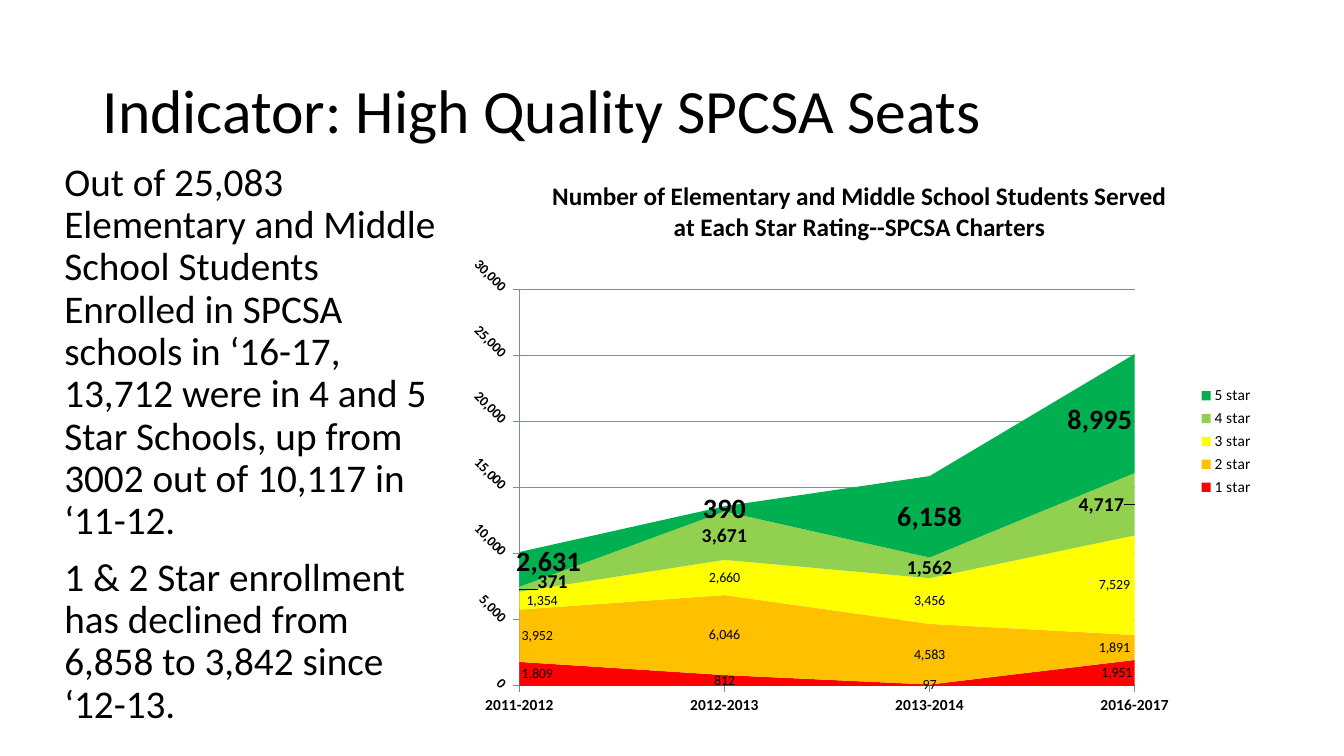
import pptx
import pptx.chart.data
import pptx.dml.color
import pptx.enum.chart
import pptx.enum.text
import pptx.oxml
import pptx.oxml.ns
import pptx.util

YEARS = ["2011-2012", "2012-2013", "2013-2014", "2016-2017"]
# name, students per year, colour, label size, bold,
# label shifts {year index: (x, y)} as shares of the chart
RATINGS = [
    ("1 star", (1809, 812, 97, 1951), "FF0000", 10, False, {0: (0.022, 0), 3: (-0.022, 0)}),
    ("2 star", (3952, 6046, 4583, 1891), "FFC000", 10, False, {0: (0.022, 0), 3: (-0.025, 0)}),
    ("3 star", (1354, 2660, 3456, 7529), "FFFF00", 10, False, {0: (0.028, 0), 3: (-0.025, 0)}),
    ("4 star", (371, 3671, 1562, 4717), "92D050", 14, True, {0: (0.041, -0.013), 3: (-0.041, 0)}),
    ("5 star", (2631, 390, 6158, 8995), "00B050", 20, True, {0: (0.036, -0.014), 3: (-0.043, 0.01)}),
]
FINDINGS = [
    "Out of 25,083 Elementary and Middle School Students Enrolled in SPCSA schools "
    "in ‘16-17, 13,712 were in 4 and 5 Star Schools, up from 3002 out of 10,117 in ‘11-12.",
    "1 & 2 Star enrollment has declined from 6,858 to 3,842 since ‘12-13.",
]


def colour(hex_code):
    return pptx.dml.color.RGBColor.from_string(hex_code)


def manual_layout(**settings):
    """Build a chart layout element from its settings, in schema order."""
    parts = "".join(f'<c:{key} val="{value}"/>' for key, value in settings.items())
    return pptx.oxml.parse_xml(
        f'<c:layout {pptx.oxml.ns.nsdecls("c")}><c:manualLayout>{parts}</c:manualLayout></c:layout>')


class SlideBuilder:
    font_name = "Calibri"
    ink = "000000"
    grid_line = "7F8BA8"
    axis_line = "7088C8"

    def __init__(self, deck):
        self.deck = deck
        self.slide = deck.slides.add_slide(deck.slide_layouts[6])

    def place(self, left, top, width, height):
        """Turn percentages of the slide into lengths."""
        across, down = self.deck.slide_width / 100, self.deck.slide_height / 100
        return [int(n) for n in (left * across, top * down, width * across, height * down)]

    def style(self, font, size, bold=False):
        font.name = self.font_name
        font.size = pptx.util.Pt(size)
        font.bold = bold
        font.color.rgb = colour(self.ink)

    def rule(self, line, hex_code):
        line.color.rgb = colour(hex_code)
        line.width = pptx.util.Pt(0.75)

    def text(self, area, paragraphs, size, anchor, space_before=0):
        frame = self.slide.shapes.add_textbox(*self.place(*area)).text_frame
        frame.word_wrap = True
        frame.vertical_anchor = anchor
        for index, wording in enumerate(paragraphs):
            paragraph = frame.add_paragraph() if index else frame.paragraphs[0]
            paragraph.line_spacing = 0.9
            paragraph.space_before = pptx.util.Pt(space_before)
            run = paragraph.add_run()
            run.text = wording
            self.style(run.font, size)

    def area_chart(self, area, heading, categories, ratings):
        data = pptx.chart.data.CategoryChartData(number_format="#,##0")
        data.categories = categories
        for name, students, *_ in ratings:
            data.add_series(name, students)
        chart = self.slide.shapes.add_chart(
            pptx.enum.chart.XL_CHART_TYPE.AREA_STACKED, *self.place(*area), data).chart
        self.style(chart.font, 10)
        chart.plots[0].vary_by_categories = False

        # Heading and legend
        chart.has_title = True
        run = chart.chart_title.text_frame.paragraphs[0].add_run()
        run.text = heading
        self.style(run.font, 18, True)
        chart.chart_title.include_in_layout = False
        chart.has_legend = True
        chart.legend.position = pptx.enum.chart.XL_LEGEND_POSITION.RIGHT
        chart.legend.include_in_layout = False
        self.style(chart.legend.font, 11)

        self.axes(chart)
        for series, (_, _, fill, size, bold, shifts) in zip(chart.plots[0].series, ratings):
            series.format.fill.solid()
            series.format.fill.fore_color.rgb = colour(fill)
            self.labels(series, size, bold, shifts)

        # Plot area inside the chart
        plot = chart._chartSpace.xpath("c:chart/c:plotArea")[0]
        for old in plot.xpath("c:layout"):
            plot.remove(old)
        plot.insert(0, manual_layout(layoutTarget="inner", xMode="edge", yMode="edge",
                                     x=0.08, y=0.232, w=0.76, h=0.698))

    def axes(self, chart):
        students, years = chart.value_axis, chart.category_axis
        for axis, size in ((students, 10), (years, 11)):
            axis.major_tick_mark = pptx.enum.chart.XL_TICK_MARK.OUTSIDE
            axis.minor_tick_mark = pptx.enum.chart.XL_TICK_MARK.NONE
            self.style(axis.tick_labels.font, size, True)
            self.rule(axis.format.line, self.axis_line)
        students.minimum_scale, students.maximum_scale = 0, 30000
        students.major_unit = 5000
        students.has_major_gridlines = True
        self.rule(students.major_gridlines.format.line, self.grid_line)
        students.tick_labels.number_format = "#,##0"
        students.tick_labels.number_format_is_linked = False
        # Slanted numbers, and areas that reach both edges
        students._element.xpath("c:txPr/a:bodyPr")[0].set("rot", "2700000")
        students._element.xpath("c:crossBetween")[0].set("val", "midCat")

    def labels(self, series, size, bold, shifts):
        labels = series.data_labels
        labels.show_value = True
        labels.number_format = "#,##0"
        labels.number_format_is_linked = False
        self.style(labels.font, size, bold)
        for index, (x, y) in shifts.items():
            self.style(series.points[index].data_label.font, size, bold)
            label = series._element.xpath(f"c:dLbls/c:dLbl[c:idx/@val='{index}']")[0]
            label.insert(1, manual_layout(x=x, y=y))


def main():
    deck = pptx.Presentation()
    deck.slide_width = pptx.util.Inches(13.33)
    deck.slide_height = pptx.util.Inches(7.5)
    seats = SlideBuilder(deck)
    anchors = pptx.enum.text.MSO_ANCHOR

    # Title and findings
    seats.text((6.9, 5.33, 86.25, 19.33), ["Indicator: High Quality SPCSA Seats"], 44, anchors.MIDDLE)
    seats.text((4.05, 20.8, 29.78, 77.73), FINDINGS, 28, anchors.TOP, space_before=10)

    # Students by star rating
    seats.area_chart(
        (33.83, 20.8, 60.24, 75.2),
        "Number of Elementary and Middle School Students Served at Each Star Rating--SPCSA Charters",
        YEARS, RATINGS)

    deck.save("out.pptx")


if __name__ == "__main__":
    main()
